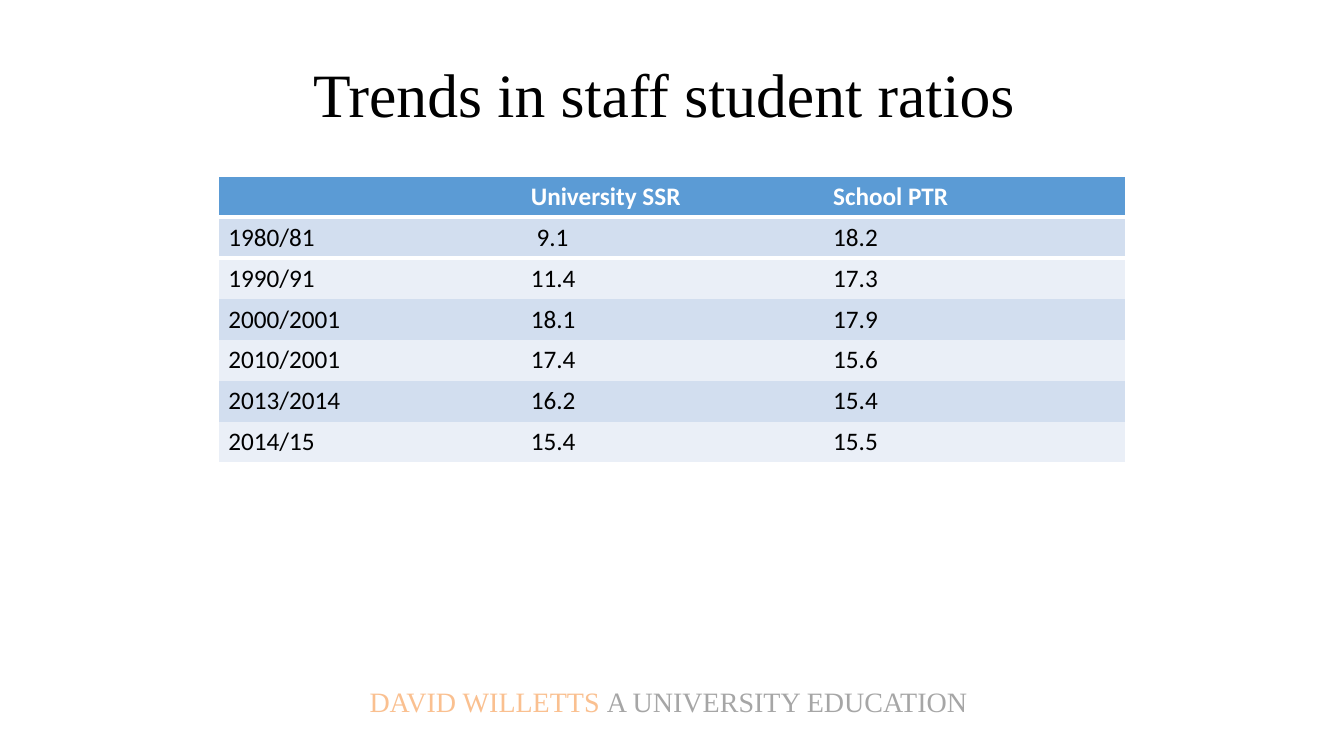
from dataclasses import dataclass

import pptx
import pptx.dml.color
import pptx.enum.text
import pptx.oxml
import pptx.oxml.ns
import pptx.util


@dataclass(frozen=True)
class Theme:
    serif: str = "Times New Roman"
    sans: str = "Calibri"
    title_size: float = 44
    footer_size: float = 20
    table_size: float = 18
    black: str = "000000"
    white: str = "FFFFFF"
    orange: str = "FAC090"
    grey: str = "A6A6A6"
    header: str = "5B9BD5"
    bands: tuple[str, str] = ("D2DEEF", "EAEFF7")
    edge: float = 1
    header_rule: float = 3


@dataclass(frozen=True)
class Box:
    """A place on the slide, in grid columns and rows."""
    col: float
    row: float
    cols: float
    rows: float

    def emu(self) -> tuple[int, int, int, int]:
        return (round(self.col * COL), round(self.row * ROW),
                round(self.cols * COL), round(self.rows * ROW))


@dataclass(frozen=True)
class Ratio:
    year: str
    university: str
    school: str


THEME = Theme()
WIDTH, HEIGHT = pptx.util.Inches(13.333), pptx.util.Inches(7.5)
COL, ROW = WIDTH / 80, HEIGHT / 150
TITLE_BOX = Box(4, 6, 72, 25)
TABLE_BOX = Box(13, 35, 54, 56.8)
FOOTER_BOX = Box(2.8, 134.8, 74.4, 20.8)
NO_STYLE_NO_GRID = "{2D5ABB26-0587-4C30-8999-92F81FD0307C}"

RATIOS = [
    Ratio("", "University SSR", "School PTR"),
    Ratio("1980/81", " 9.1", "18.2"),
    Ratio("1990/91", "11.4", "17.3"),
    Ratio("2000/2001", "18.1", "17.9"),
    Ratio("2010/2001", "17.4", "15.6"),
    Ratio("2013/2014", "16.2", "15.4"),
    Ratio("2014/15", "15.4", "15.5"),
]


def add_text(p, text: str, *, font: str, size: float, color: str, bold: bool = False) -> None:
    r = p.add_run()
    r.text = text
    r.font.name = font
    r.font.size = pptx.util.Pt(size)
    r.font.bold = bold
    r.font.color.rgb = pptx.dml.color.RGBColor.from_string(color)


def add_border(cell, side: str, width: float) -> None:
    """Draw a white line on side L, R, T or B; call in that order, before the fill."""
    cell._tc.get_or_add_tcPr().append(pptx.oxml.parse_xml(
        f'<a:ln{side} {pptx.oxml.ns.nsdecls("a")} w="{pptx.util.Pt(width)}">'
        f'<a:solidFill><a:srgbClr val="{THEME.white}"/></a:solidFill></a:ln{side}>'))


def add_title(s) -> None:
    sp = s.shapes.title
    sp.left, sp.top, sp.width, sp.height = TITLE_BOX.emu()
    tf = sp.text_frame
    tf.vertical_anchor = pptx.enum.text.MSO_ANCHOR.MIDDLE
    p = tf.paragraphs[0]
    p.alignment = pptx.enum.text.PP_ALIGN.CENTER
    add_text(p, "Trends in staff student ratios ", font=THEME.serif,
             size=THEME.title_size, color=THEME.black)


def add_ratio_table(s) -> None:
    rows = [(ratio.year, ratio.university, ratio.school) for ratio in RATIOS]
    last_row, last_col = len(rows) - 1, len(rows[0]) - 1
    table = s.shapes.add_table(len(rows), len(rows[0]), *TABLE_BOX.emu()).table
    table._tbl.tblPr.find(pptx.oxml.ns.qn("a:tableStyleId")).text = NO_STYLE_NO_GRID
    for i, row in enumerate(rows):
        is_header = i == 0
        for j, text in enumerate(row):
            cell = table.cell(i, j)
            borders = {
                "L": THEME.edge if j == 0 else 0,
                "R": THEME.edge if j == last_col else 0,
                "T": THEME.edge if is_header else THEME.header_rule if i == 1 else 0,
                "B": THEME.header_rule if is_header else THEME.edge if i == last_row else 0,
            }
            for side, width in borders.items():
                if width:
                    add_border(cell, side, width)
            cell.fill.solid()
            cell.fill.fore_color.rgb = pptx.dml.color.RGBColor.from_string(
                THEME.header if is_header else THEME.bands[(i - 1) % 2])
            if text:
                add_text(cell.text_frame.paragraphs[0], text, font=THEME.sans,
                         size=THEME.table_size, bold=is_header,
                         color=THEME.white if is_header else THEME.black)


def add_footer(s) -> None:
    tf = s.shapes.add_textbox(*FOOTER_BOX.emu()).text_frame
    tf.word_wrap = True
    p = tf.paragraphs[0]
    p.alignment = pptx.enum.text.PP_ALIGN.CENTER
    for text, color in (("DAVID WILLETTS ", THEME.orange),
                        ("A UNIVERSITY EDUCATION ", THEME.grey)):
        add_text(p, text, font=THEME.serif, size=THEME.footer_size, color=color)


def main() -> None:
    prs = pptx.Presentation()
    prs.slide_width, prs.slide_height = WIDTH, HEIGHT
    s = prs.slides.add_slide(prs.slide_layouts.get_by_name("Title Only"))
    add_footer(s)
    add_title(s)
    add_ratio_table(s)
    prs.save("out.pptx")


if __name__ == "__main__":
    main()
